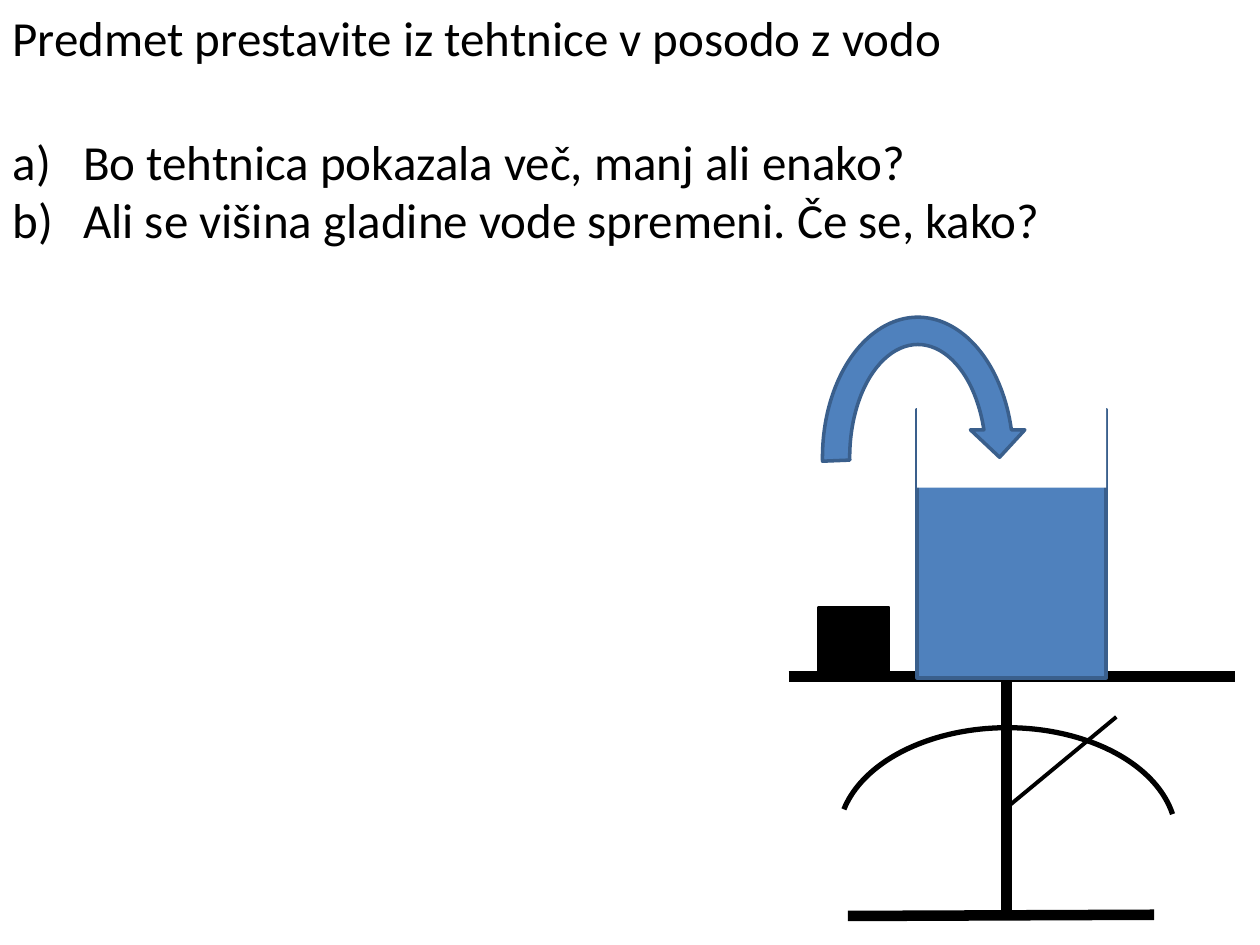
from lxml.etree import SubElement
from pptx import Presentation
from pptx.dml.color import RGBColor
from pptx.enum.shapes import MSO_CONNECTOR as Connector, MSO_SHAPE as Shape
from pptx.enum.text import MSO_ANCHOR as Anchor, MSO_AUTO_SIZE as AutoSize, PP_ALIGN as Align
from pptx.oxml.ns import qn
from pptx.util import Inches, Pt

COLORS = {"black": "000000", "white": "FFFFFF", "blue": "4F81BD", "edge": "3A5F8C"}
TITLE = "Predmet prestavite iz tehtnice v posodo z vodo"
QUESTIONS = [
    "Bo tehtnica pokazala več, manj ali enako?",
    "Ali se višina gladine vode spremeni. Če se, kako?",
]
PLATE_Y, STEM_X, BASE_Y = 5.37, 7.99, 7.26
SCALE_LINES = [
    ((6.26, PLATE_Y), (9.8, PLATE_Y), 6),
    ((STEM_X, PLATE_Y), (STEM_X, BASE_Y), 6),
    ((6.73, 7.27), (9.16, BASE_Y), 6),
]
NEEDLE = ((STEM_X, 6.41), (8.86, 5.69), 2.25)
BEAKER_X, BEAKER_WIDTH = 7.28, 1.5


def color(name):
    return RGBColor.from_string(COLORS[name])


def write_text(shape, lines, box, size=28, font="Calibri", numbered=False):
    shape.left, shape.top, shape.width, shape.height = map(Inches, box)
    frame = shape.text_frame
    frame.text = "\n".join(lines)
    frame.word_wrap = False
    frame.auto_size = AutoSize.SHAPE_TO_FIT_TEXT
    frame.vertical_anchor = Anchor.TOP
    for paragraph in frame.paragraphs:
        paragraph.alignment = Align.LEFT
        paragraph.space_before = Pt(0)
        paragraph.font.size = Pt(size)
        paragraph.font.name = font
        paragraph.font.color.rgb = color("black")
        if numbered:
            properties = paragraph._p.get_or_add_pPr()
            properties.set("marL", str(Inches(0.56)))
            properties.set("indent", str(-Inches(0.56)))
            bullet = SubElement(properties, qn("a:buFont"))
            bullet.set("typeface", "+mj-lt")
            number = SubElement(properties, qn("a:buAutoNum"))
            number.set("type", "alphaLcParenR")
            properties.append(properties.find(qn("a:defRPr")))


def add_line(shapes, start, end, width):
    line = shapes.add_connector(Connector.STRAIGHT, *map(Inches, start + end))
    line.line.color.rgb = color("black")
    line.line.width = Pt(width)
    SubElement(line._element.spPr, qn("a:effectLst"))


def add_figure(shapes, kind, box, fill=None, line=None, width=2, adjustments=(), rotation=0):
    shape = shapes.add_shape(kind, *map(Inches, box))
    shape.shadow.inherit = False
    shape.rotation = rotation
    for index, value in enumerate(adjustments):
        shape.adjustments[index] = value
    if fill:
        shape.fill.solid()
        shape.fill.fore_color.rgb = color(fill)
    else:
        shape.fill.background()
    if line:
        shape.line.color.rgb = color(line)
        shape.line.width = Pt(width)
    else:
        shape.line.fill.background()


def main():
    presentation = Presentation()
    presentation.slide_width, presentation.slide_height = Inches(10), Inches(7.5)
    slide = presentation.slides.add_slide(presentation.slide_layouts[1])
    shapes = slide.shapes

    write_text(shapes.title, [TITLE], (0, 0.01, 7.65, 0.57))
    write_text(slide.placeholders[1], QUESTIONS, (0, 0.99, 8.46, 1.04), numbered=True)

    scale = shapes.add_group_shape().shapes
    for start, end, width in SCALE_LINES:
        add_line(scale, start, end, width)
    add_figure(scale, Shape.ARC, (7.13, 5.3, 1.73, 2.68), line="black", width=3,
               adjustments=(167.7, 49.34), rotation=270)
    add_line(scale, *NEEDLE)

    beaker = shapes.add_group_shape().shapes
    add_figure(beaker, Shape.RECTANGLE, (BEAKER_X, 3.25, BEAKER_WIDTH, 2.13),
               fill="blue", line="edge")
    add_figure(beaker, Shape.RECTANGLE, (BEAKER_X, 2.93, BEAKER_WIDTH, 0.94), fill="white")

    add_figure(shapes, Shape.RECTANGLE, (6.5, 4.82, 0.55, 0.55), fill="black", line="black")
    add_figure(shapes, Shape.CIRCULAR_ARROW, (6.42, 2.41, 1.73, 2.44), fill="blue", line="edge",
               adjustments=(0.125, 11.42, 204.58, 106.6, 0.125))
    presentation.save("out.pptx")


if __name__ == "__main__":
    main()
